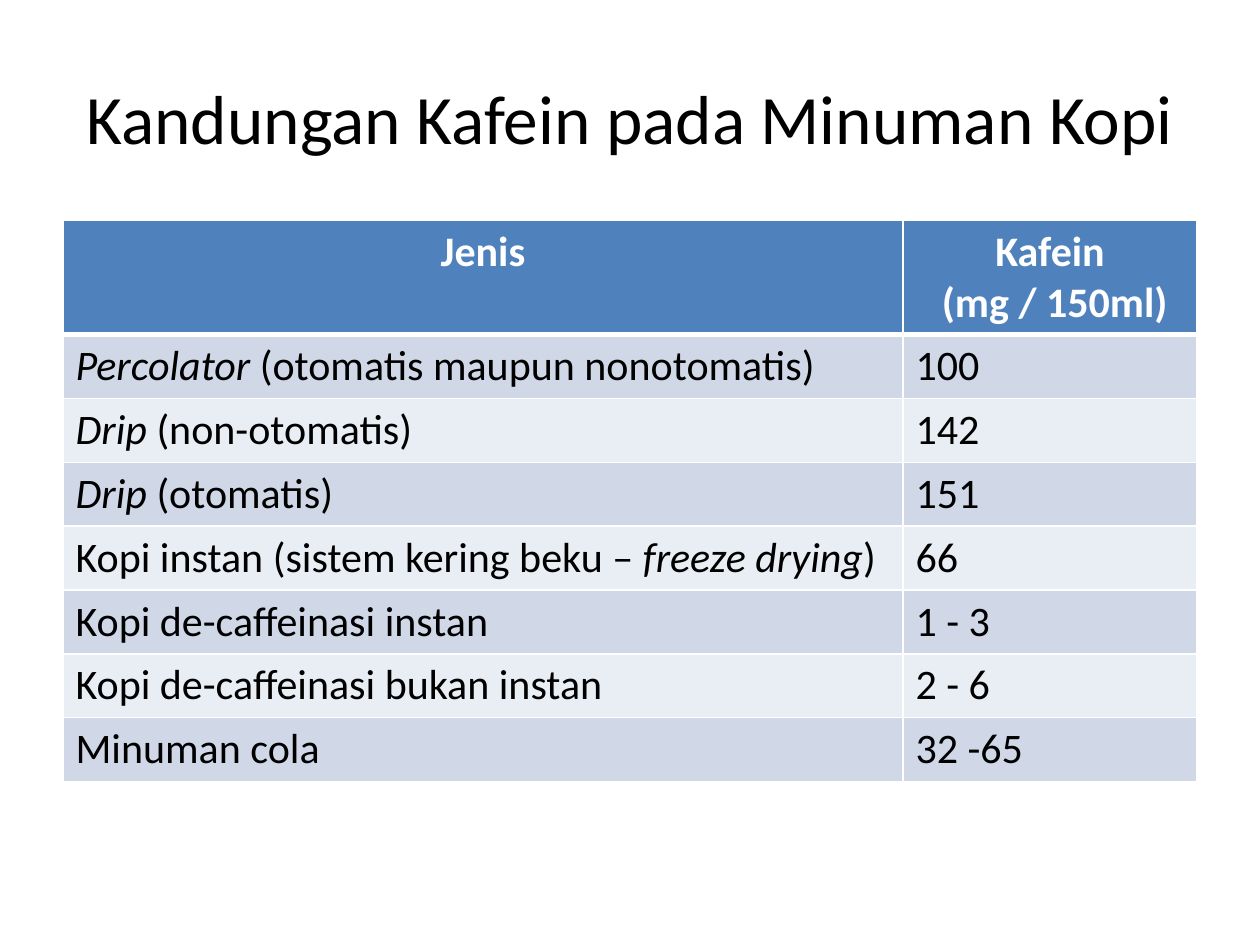
from lxml import etree
from pptx import Presentation
from pptx.dml.color import RGBColor
from pptx.enum.text import MSO_ANCHOR, PP_ALIGN
from pptx.oxml.ns import qn
from pptx.util import Pt

CENTER, LEFT = PP_ALIGN.CENTER, PP_ALIGN.LEFT
MIDDLE = MSO_ANCHOR.MIDDLE

TITLE = "Kandungan Kafein pada Minuman Kopi"
HEADERS = [["Jenis"], ["Kafein", " (mg / 150ml)"]]
# Each drink is a list of (text, italic) runs, followed by its caffeine content.
DRINKS = [
    ([("Percolator", True), (" (otomatis maupun nonotomatis)", False)], "100"),
    ([("Drip ", True), ("(non-otomatis)", False)], "142"),
    ([("Drip ", True), ("(otomatis)", False)], "151"),
    ([("Kopi instan (sistem kering beku – ", False), ("freeze drying", True),
      (")", False)], "66"),
    ([("Kopi de-caffeinasi instan", False)], "1 - 3"),
    ([("Kopi de-caffeinasi bukan instan", False)], "2 - 6"),
    ([("Minuman cola", False)], "32 -65"),
]

BLACK, WHITE = "000000", "FFFFFF"
HEADER_FILL = "4F81BD"
BAND_FILLS = ["D0D8E8", "E9EDF4"]
TITLE_FORMAT = {"name": "Calibri", "size": Pt(39.6)}
BODY_FORMAT = {"name": "Calibri", "size": Pt(24), "bold": False}
HEADER_FORMAT = {**BODY_FORMAT, "bold": True}

MARGIN, CONTENT_WIDTH = 36, 648
TITLE_TOP, TITLE_HEIGHT = 21.6, 90
TABLE_TOP = 126
COLUMN_WIDTHS = [480, 168]
HEADER_HEIGHT, ROW_HEIGHT = 65.2, 36.5
THIN, THICK = 1, 3


def color(value):
    return RGBColor.from_string(value)


def write_paragraphs(text_frame, paragraphs, alignment, font_format, font_color):
    """Fill a text frame with paragraphs given as lists of (text, italic) runs."""
    for index, runs in enumerate(paragraphs):
        paragraph = text_frame.add_paragraph() if index else text_frame.paragraphs[0]
        paragraph.alignment = alignment
        for text, italic in runs:
            run = paragraph.add_run()
            run.text = text
            for name, value in {**font_format, "italic": italic}.items():
                setattr(run.font, name, value)
            run.font.color.rgb = color(font_color)


def set_borders(cell, widths):
    """Draw white borders; they must come before the fill in the cell properties."""
    properties = cell._tc.get_or_add_tcPr()
    for index, (side, width) in enumerate(widths.items()):
        line = etree.Element(qn(f"a:ln{side}"), w=str(Pt(width)))
        fill = etree.SubElement(line, qn("a:solidFill"))
        etree.SubElement(fill, qn("a:srgbClr"), val=WHITE)
        properties.insert(index, line)


def add_title(slide):
    box = slide.shapes.add_textbox(
        Pt(MARGIN), Pt(TITLE_TOP), Pt(CONTENT_WIDTH), Pt(TITLE_HEIGHT))
    box.text_frame.word_wrap = True
    box.text_frame.vertical_anchor = MIDDLE
    write_paragraphs(box.text_frame, [[(TITLE, False)]], CENTER, TITLE_FORMAT, BLACK)


def add_caffeine_table(slide):
    rows = [[[[(line, False)] for line in header] for header in HEADERS]]
    rows += [[[drink], [[(amount, False)]]] for drink, amount in DRINKS]
    height = HEADER_HEIGHT + ROW_HEIGHT * len(DRINKS)
    table = slide.shapes.add_table(
        len(rows), len(COLUMN_WIDTHS),
        Pt(MARGIN), Pt(TABLE_TOP), Pt(CONTENT_WIDTH), Pt(height)).table
    for column, width in zip(table.columns, COLUMN_WIDTHS):
        column.width = Pt(width)
    for row_index, row in enumerate(rows):
        is_header = row_index == 0
        table.rows[row_index].height = Pt(HEADER_HEIGHT if is_header else ROW_HEIGHT)
        if is_header:
            fill, style = HEADER_FILL, (CENTER, HEADER_FORMAT, WHITE)
        else:
            fill, style = BAND_FILLS[(row_index - 1) % 2], (LEFT, BODY_FORMAT, BLACK)
        top = THICK if row_index == 1 else THIN
        bottom = THICK if is_header else THIN
        for column_index, paragraphs in enumerate(row):
            cell = table.cell(row_index, column_index)
            cell.fill.solid()
            cell.fill.fore_color.rgb = color(fill)
            set_borders(cell, {"L": THIN, "R": THIN, "T": top, "B": bottom})
            write_paragraphs(cell.text_frame, paragraphs, *style)


def main():
    presentation = Presentation()
    presentation.slide_width, presentation.slide_height = Pt(720), Pt(540)
    slide = presentation.slides.add_slide(presentation.slide_layouts[6])
    add_title(slide)
    add_caffeine_table(slide)
    presentation.save("out.pptx")


if __name__ == "__main__":
    main()
